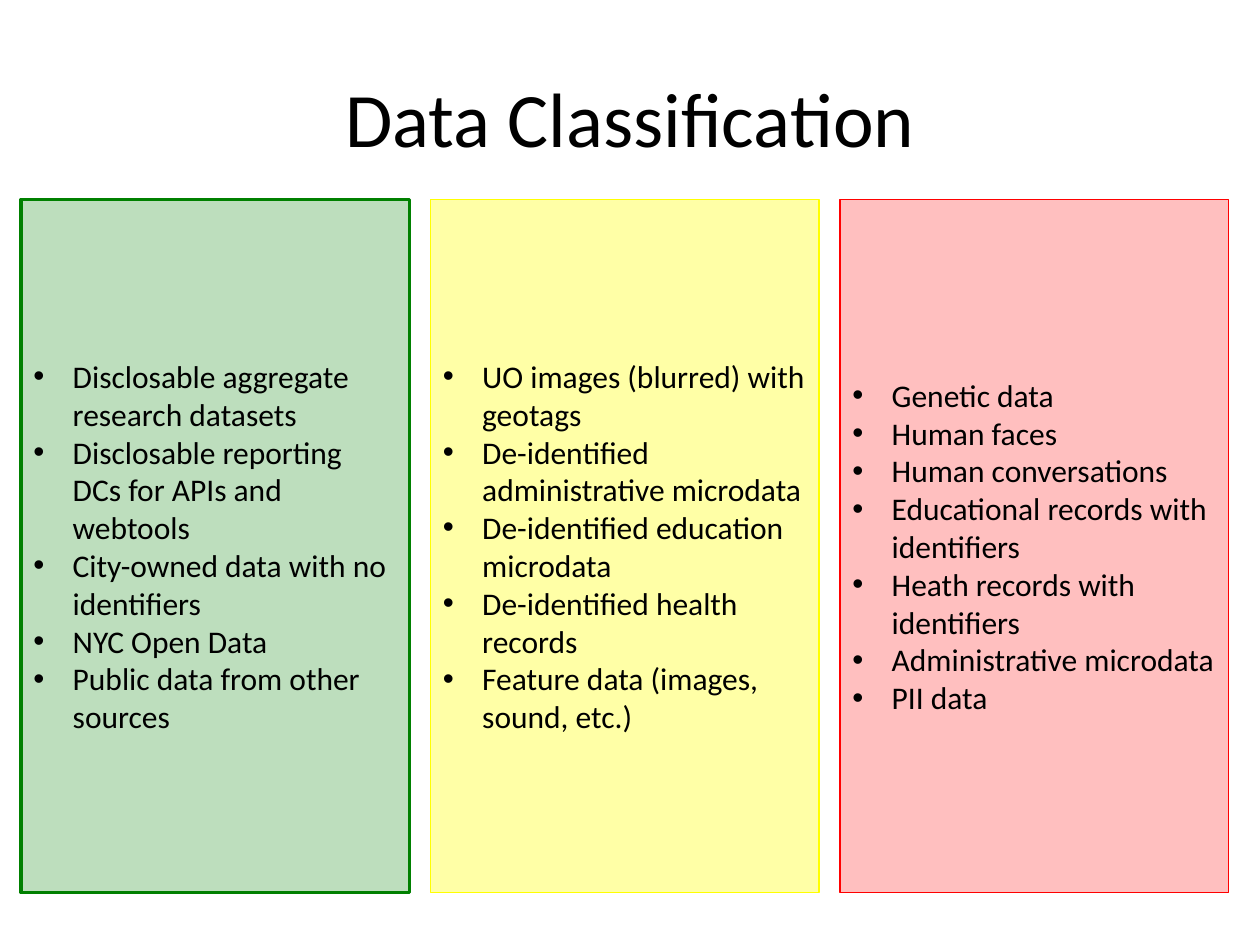
from pptx import Presentation
from pptx.dml.color import RGBColor
from pptx.enum.shapes import MSO_SHAPE as Shape
from pptx.enum.text import MSO_ANCHOR as Anchor, PP_ALIGN as Align
from pptx.oxml.ns import qn
from pptx.util import Pt
from lxml.etree import SubElement

BLACK = RGBColor(0x00, 0x00, 0x00)
GREEN = RGBColor(0x00, 0x80, 0x00)
YELLOW = RGBColor(0xFF, 0xFF, 0x00)
RED = RGBColor(0xFF, 0x00, 0x00)

LEFT, TOP, WIDTH, HEIGHT, GAP = 12, 114, 222, 396, 12

# Each panel: colour, fill opacity in percent, line width, items
PANELS = [
    (GREEN, 26, 2, [
        "Disclosable aggregate research datasets",
        "Disclosable reporting DCs for APIs and webtools",
        "City-owned data with no identifiers",
        "NYC Open Data",
        "Public data from other sources",
    ]),
    (YELLOW, 35, 0.75, [
        "UO images (blurred) with geotags",
        "De-identified administrative microdata",
        "De-identified education microdata",
        "De-identified health records",
        "Feature data (images, sound, etc.)",
    ]),
    (RED, 25, 0.75, [
        "Genetic data",
        "Human faces",
        "Human conversations",
        "Educational records with identifiers",
        "Heath records with identifiers",
        "Administrative microdata",
        "PII data",
    ]),
]


def add_bullet(para, indent):
    """Give the paragraph a hanging round bullet."""
    props = para._p.get_or_add_pPr()
    props.set("marL", str(Pt(indent)))
    props.set("indent", str(-Pt(indent)))
    SubElement(props, qn("a:buFont")).set("typeface", "Arial")
    SubElement(props, qn("a:buChar")).set("char", "•")


def write(frame, lines, size=18, align=Align.LEFT, bullet=None,
          font="Calibri", color=BLACK):
    """Fill the frame, one paragraph a line; bullet is the hanging indent."""
    frame.word_wrap = True
    frame.vertical_anchor = Anchor.MIDDLE
    for i, line in enumerate(lines):
        para = frame.add_paragraph() if i else frame.paragraphs[0]
        para.alignment = align
        if bullet:
            add_bullet(para, bullet)
        run = para.add_run()
        run.text = line
        run.font.name = font
        run.font.size = Pt(size)
        run.font.color.rgb = color


class Deck:
    def __init__(self, width, height):
        self.prs = Presentation()
        self.prs.slide_width = Pt(width)
        self.prs.slide_height = Pt(height)
        self.slide = None

    def add_slide(self):
        self.slide = self.prs.slides.add_slide(self.prs.slide_layouts[5])

    def title(self, text, left, top, width, height):
        box = self.slide.shapes.title
        box.left, box.top = Pt(left), Pt(top)
        box.width, box.height = Pt(width), Pt(height)
        write(box.text_frame, [text], size=44, align=Align.CENTER)

    def panel(self, left, color, opacity, line, items):
        box = self.slide.shapes.add_shape(
            Shape.RECTANGLE, Pt(left), Pt(TOP), Pt(WIDTH), Pt(HEIGHT))
        box.shadow.inherit = False
        box.fill.solid()
        box.fill.fore_color.rgb = color
        tint = box._element.spPr.find(qn("a:solidFill"))[0]
        SubElement(tint, qn("a:alpha")).set("val", str(opacity * 1000))
        box.line.color.rgb = color
        box.line.width = Pt(line)
        write(box.text_frame, items, bullet=22.5)


def main():
    deck = Deck(720, 540)
    deck.add_slide()
    deck.title("Data Classification", 36, 21.6, 648, 90)
    for i, panel in enumerate(PANELS):
        deck.panel(LEFT + i * (WIDTH + GAP), *panel)
    deck.prs.save("out.pptx")


if __name__ == "__main__":
    main()
